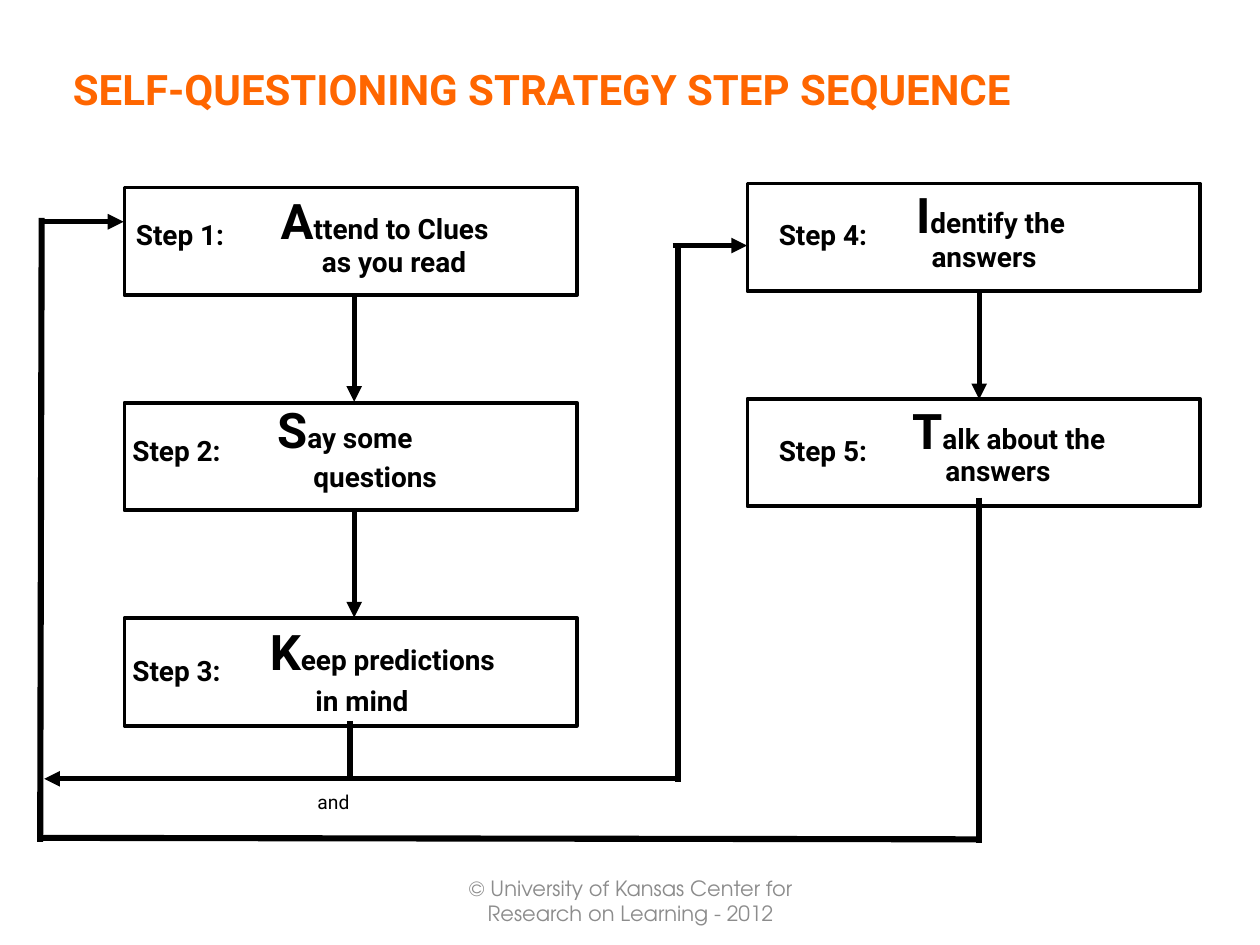
from pptx import Presentation
from pptx.dml.color import RGBColor
from pptx.enum.shapes import MSO_CONNECTOR, MSO_SHAPE
from pptx.enum.text import MSO_ANCHOR, PP_ALIGN
from pptx.oxml.ns import qn
from pptx.util import Cm, Pt
from lxml.etree import SubElement


def hue(code):
    return RGBColor.from_string(code)


class Deck:
    font = "Roboto"
    ink = "000000"
    paper = "FFFFFF"
    accent = "FF6600"
    grey = "8C8C8C"

    def __init__(self):
        self.show = Presentation()
        self.show.slide_width, self.show.slide_height = Cm(25.4), Cm(19.05)
        self.slide = self.show.slides.add_slide(self.show.slide_layouts[5])

    def place(self, shape, x, y, w, h):
        shape.left, shape.top, shape.width, shape.height = Cm(x), Cm(y), Cm(w), Cm(h)

    def fill(self, frame, runs, color=ink, bold=True, font=font):
        para = frame.paragraphs[0]
        for words, size in runs:
            run = para.add_run()
            run.text = words
            run.font.name = font
            run.font.size = Pt(size)
            run.font.bold = bold
            run.font.color.rgb = hue(color)
        return para

    def bare(self, frame):
        frame.margin_left = frame.margin_right = 0
        frame.margin_top = frame.margin_bottom = 0
        frame.vertical_anchor = MSO_ANCHOR.TOP

    def title(self, words, x, y, w, h):
        shape = self.slide.shapes.title
        self.place(shape, x, y, w, h)
        self.bare(shape.text_frame)
        para = self.fill(shape.text_frame, [(words, 24)], self.accent)
        para.alignment = PP_ALIGN.LEFT

    def text(self, x, y, w, h, runs, bold=True):
        shape = self.slide.shapes.add_textbox(Cm(x), Cm(y), Cm(w), Cm(h))
        shape.text_frame.word_wrap = True
        self.bare(shape.text_frame)
        self.fill(shape.text_frame, runs, bold=bold)

    def foot(self, words, x, y, w, h):
        shape = self.slide.shapes.add_textbox(Cm(x), Cm(y), Cm(w), Cm(h))
        frame = shape.text_frame
        frame.word_wrap = True
        frame.vertical_anchor = MSO_ANCHOR.MIDDLE
        para = self.fill(frame, [(words, 12)], self.grey, False, "TeX Gyre Adventor")
        para.alignment = PP_ALIGN.CENTER

    def box(self, x, y, w, h):
        shape = self.slide.shapes.add_shape(
            MSO_SHAPE.RECTANGLE, Cm(x), Cm(y), Cm(w), Cm(h))
        shape.shadow.inherit = False
        shape.fill.solid()
        shape.fill.fore_color.rgb = hue(self.paper)
        shape.line.color.rgb = hue(self.ink)
        shape.line.width = Pt(2.25)

    def line(self, x1, y1, x2, y2, width=3.5):
        wire = self.slide.shapes.add_connector(
            MSO_CONNECTOR.STRAIGHT, Cm(x1), Cm(y1), Cm(x2), Cm(y2))
        wire.line.color.rgb = hue(self.ink)
        wire.line.width = Pt(width)
        SubElement(wire._element.spPr, qn("a:effectLst"))
        return wire

    def arrow(self, *ends):
        wire = self.line(*ends, width=3)
        stroke = wire._element.spPr.find(qn("a:ln"))
        SubElement(stroke, qn("a:tailEnd"), type="triangle")

    def step(self, num, spot, label, head, tail, first, rest, more):
        self.box(*spot, 9.12, 2.17)
        self.text(*label, 2.79, 0.69, [(f"Step {num}:", 16)])
        self.text(*head, 6.2, 1.19, [(first, 28), (rest, 16)])
        self.text(*tail, 4.1, 0.69, [(more, 16)])


STEPS = [
    ((2.51, 3.78), (2.74, 4.39), (5.66, 3.84), (6.49, 4.93),
     "A", "ttend to Clues", "as you read"),
    ((2.51, 8.12), (2.67, 8.74), (5.59, 8.05), (6.32, 9.27),
     "S", "ay some", "questions"),
    ((2.51, 12.46), (2.67, 13.18), (5.44, 12.52), (6.36, 13.77),
     "K", "eep predictions", "in mind"),
    ((15.07, 3.7), (15.7, 4.39), (18.47, 3.73), (18.78, 4.83),
     "I", "dentify the", "answers"),
    ((15.07, 8.04), (15.7, 8.74), (18.39, 8.08), (19.06, 9.14),
     "T", "alk about the", "answers"),
]

LINES = [
    (19.74, 10.03, 19.74, 16.99),
    (7.06, 14.53, 7.06, 15.72),
    (0.84, 4.39, 0.81, 16.97),
    (13.67, 5, 13.67, 15.77),
    (0.76, 16.89, 19.74, 16.92),
]

ARROWS = [
    (0.86, 4.47, 2.49, 4.47),
    (7.14, 5.92, 7.14, 8.1),
    (13.67, 15.7, 0.89, 15.7),
    (7.14, 10.26, 7.14, 12.45),
    (13.56, 4.95, 15.06, 4.95),
    (19.74, 5.87, 19.74, 8.05),
]


def main():
    deck = Deck()
    deck.title("SELF-QUESTIONING STRATEGY STEP SEQUENCE", 1.47, 1.27, 23, 1.02)
    for num, step in enumerate(STEPS, 1):
        deck.step(num, *step)
    deck.text(6.4, 15.93, 1, 0.48, [("and", 11)], bold=False)
    for ends in LINES:
        deck.line(*ends)
    for ends in ARROWS:
        deck.arrow(*ends)
    deck.foot("© University of Kansas Center for Research on Learning - 2012",
              8.69, 17.65, 8.05, 1.02)
    deck.show.save("out.pptx")


if __name__ == "__main__":
    main()
